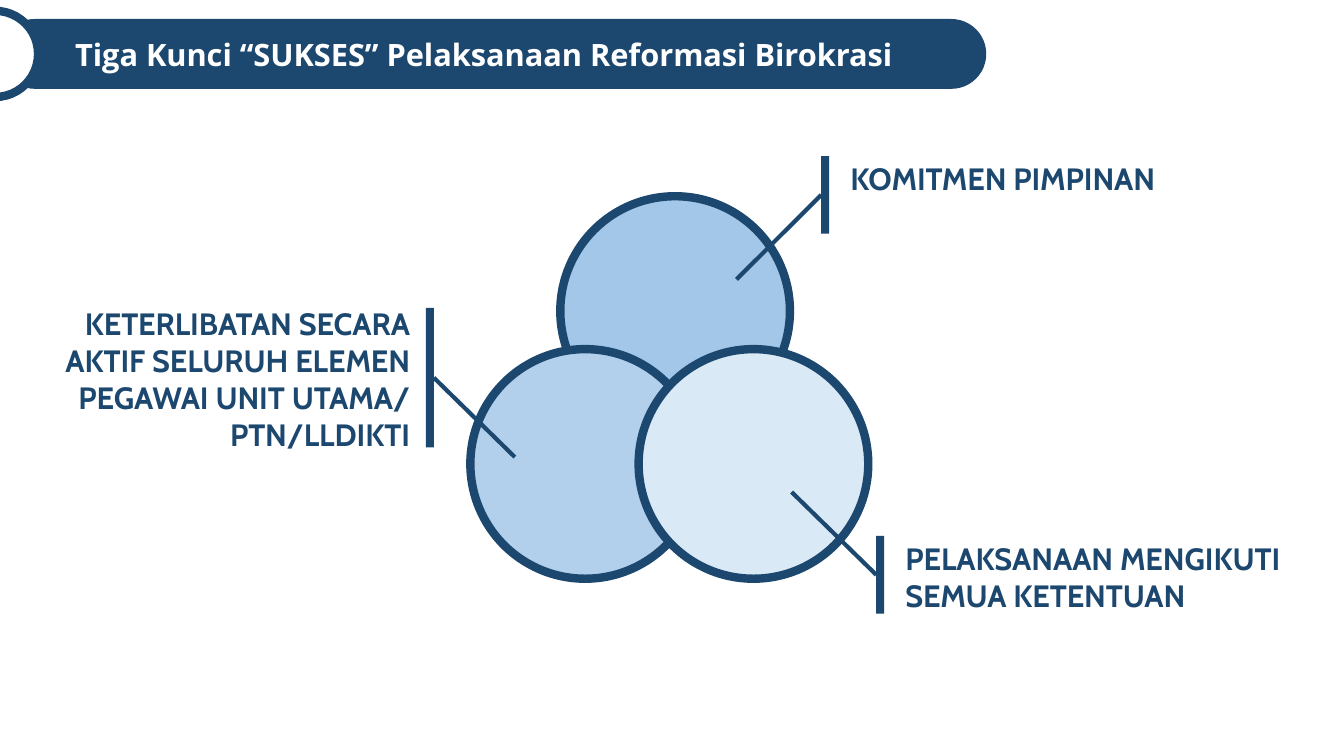
from pptx import Presentation
from pptx.dml.color import RGBColor
from pptx.enum.shapes import MSO_CONNECTOR, MSO_SHAPE as Shape
from pptx.enum.text import MSO_AUTO_SIZE, PP_ALIGN as Align
from pptx.oxml.ns import qn
from pptx.util import Cm, Pt
from lxml.etree import SubElement

NAVY = RGBColor(0x1C, 0x47, 0x6E)
WHITE = RGBColor(0xFF, 0xFF, 0xFF)
SKY = RGBColor(0xA2, 0xC7, 0xE8)
MIST = RGBColor(0xB2, 0xD0, 0xEC)
ICE = RGBColor(0xDA, 0xE9, 0xF6)

BAR_WIDTH = 0.15
LEFT_SIDE, RIGHT_SIDE = 1, 3


def add_text(slide, text, left, top, width, height, font="Cabin",
             color=NAVY, size=16.5, align=Align.LEFT):
    box = slide.shapes.add_textbox(Cm(left), Cm(top), Cm(width), Cm(height))
    frame = box.text_frame
    frame.word_wrap = True
    frame.auto_size = MSO_AUTO_SIZE.SHAPE_TO_FIT_TEXT
    paragraph = frame.paragraphs[0]
    paragraph.alignment = align
    run = paragraph.add_run()
    run.text = text
    run.font.name = font
    run.font.size = Pt(size)
    run.font.bold = True
    run.font.color.rgb = color


def add_block(slide, kind, left, top, width, height, fill=NAVY, outlined=False):
    block = slide.shapes.add_shape(kind, Cm(left), Cm(top), Cm(width), Cm(height))
    block.shadow.inherit = False
    block.fill.solid()
    block.fill.fore_color.rgb = fill
    if outlined:
        block.line.color.rgb = NAVY
        block.line.width = Pt(4.5)
    else:
        block.line.fill.background()
    return block


def add_header(slide, title, left, top, width, height):
    banner = add_block(slide, Shape.ROUNDED_RECTANGLE, left, top, width, height)
    banner.adjustments[0] = 0.5
    # Ring running off the left edge, centred on the banner's height
    ring = 1.63
    add_block(slide, Shape.OVAL, left - 0.91, top + (height - ring) / 2,
              ring, ring, WHITE, outlined=True)
    add_text(slide, title, left + 1.17, top + 0.2, width - 1.52, 0.97,
             font="Open Sans", color=WHITE)


def add_key_circles(slide, left, top, diameter):
    # One circle above, two below, from back to front
    for dx, dy, fill in ((1.7, 0, SKY), (0, 2.89, MIST), (3.18, 2.89, ICE)):
        add_block(slide, Shape.OVAL, left + dx, top + dy, diameter, diameter,
                  fill, outlined=True)


def add_callout(slide, text, left, top, width, height, target, bar_drop,
                bar_height, gap=0.3, bar_on_right=False):
    """Bar and label fill the box; a leader joins the bar to the target."""
    bar_left = left + width - BAR_WIDTH if bar_on_right else left
    bar = add_block(slide, Shape.RECTANGLE, bar_left, top + bar_drop,
                    BAR_WIDTH, bar_height)
    add_text(slide, text, left if bar_on_right else left + gap, top,
             width - gap, height, align=Align.RIGHT if bar_on_right else Align.LEFT)

    # Leader line
    x, y = (Cm(value) for value in target)
    leader = slide.shapes.add_connector(MSO_CONNECTOR.STRAIGHT, x, y, x, y)
    leader.end_connect(bar, RIGHT_SIDE if bar_on_right else LEFT_SIDE)
    leader.line.color.rgb = NAVY
    leader.line.width = Pt(2.25)
    SubElement(leader._element.spPr, qn("a:effectLst"))


def main():
    deck = Presentation()
    deck.slide_width, deck.slide_height = Cm(25.4), Cm(14.29)
    slide = deck.slides.add_slide(deck.slide_layouts[6])

    add_header(slide, "Tiga Kunci “SUKSES” Pelaksanaan Reformasi Birokrasi",
               0, 0.36, 18.64, 1.32)
    add_key_circles(slide, 8.89, 3.71, 4.34)

    # The three keys
    add_callout(slide, "KOMITMEN PIMPINAN", 15.52, 2.89, 7.92, 0.97,
                target=(13.92, 5.28), bar_drop=0.06, bar_height=1.47)
    add_callout(slide, "PELAKSANAAN MENGIKUTI SEMUA KETENTUAN",
                16.56, 10.07, 7.92, 1.68,
                target=(14.96, 9.3), bar_drop=0.06, bar_height=1.47)
    add_callout(slide, "KETERLIBATAN SECARA AKTIF SELURUH ELEMEN "
                "PEGAWAI UNIT UTAMA/ PTN/LLDIKTI", 0.71, 5.64, 7.49, 3.07,
                target=(9.73, 8.64), bar_drop=0.18, bar_height=2.64,
                gap=0.2, bar_on_right=True)

    deck.save("out.pptx")


if __name__ == "__main__":
    main()
